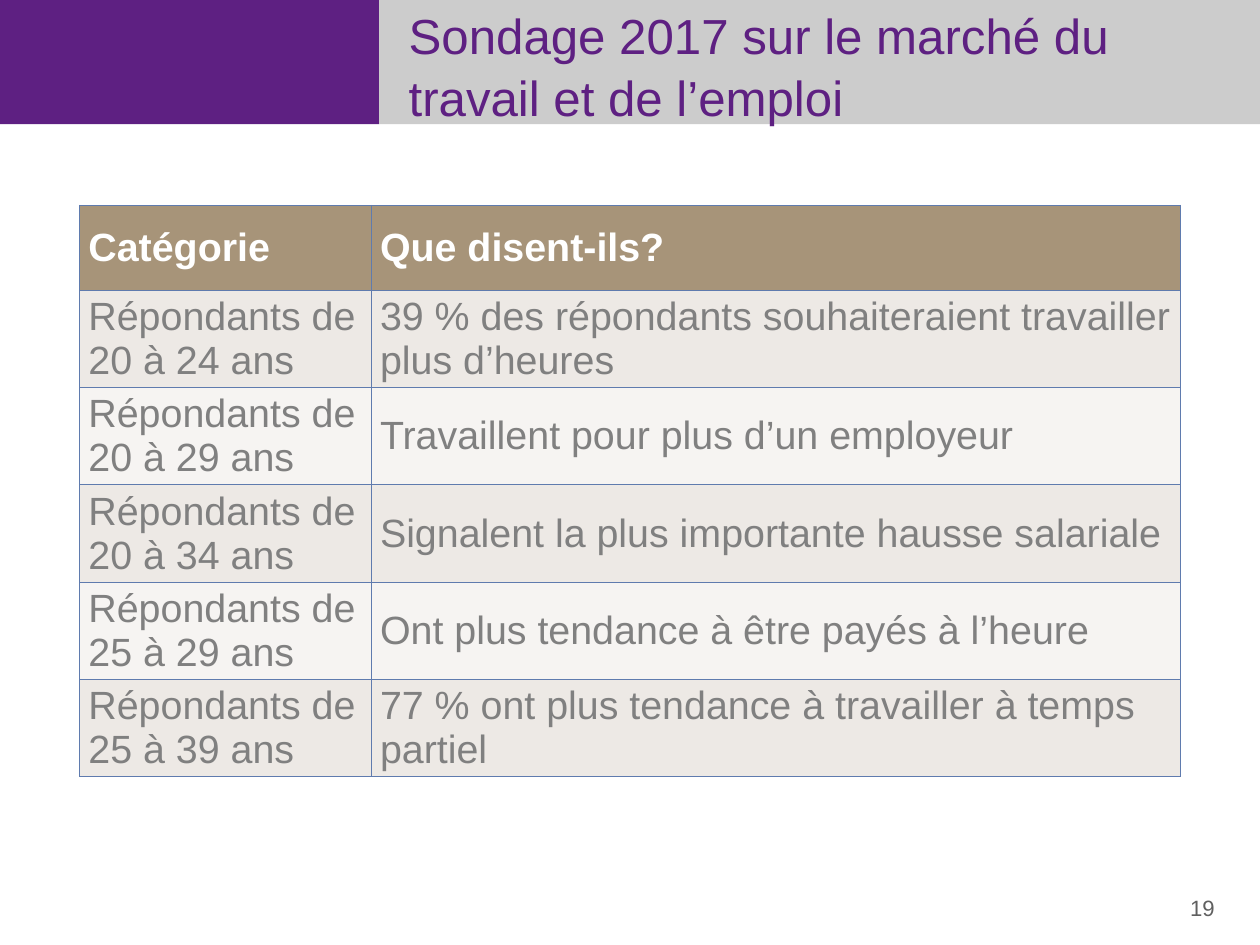
from lxml import etree
from pptx import Presentation
from pptx.dml.color import RGBColor
from pptx.enum.shapes import MSO_SHAPE
from pptx.enum.text import MSO_ANCHOR, MSO_AUTO_SIZE, PP_ALIGN
from pptx.oxml.ns import qn
from pptx.util import Cm, Pt

RECTANGLE = MSO_SHAPE.RECTANGLE
MIDDLE = MSO_ANCHOR.MIDDLE
NO_AUTOFIT = MSO_AUTO_SIZE.NONE
LEFT, RIGHT = PP_ALIGN.LEFT, PP_ALIGN.RIGHT

SLIDE_WIDTH, SLIDE_HEIGHT = 36.12, 27.1
BANNER_HEIGHT, BANNER_SPLIT = 3.56, 10.87
COLUMN_WIDTHS = [8.36, 23.21]
ROW_HEIGHT = 2.44

COLORS = {
    "purple": "5E2082",
    "silver": "CCCCCC",
    "number": "606060",
    "header": "A79479",
    "header_text": "FFFFFF",
    "odd_row": "EDE9E5",
    "even_row": "F6F4F2",
    "text": "808080",
    "border": "5F7BAE",
}

SURVEY_ROWS = [
    ("Catégorie", "Que disent-ils?"),
    ("Répondants de 20 à 24 ans", "39 % des répondants souhaiteraient travailler plus d’heures"),
    ("Répondants de 20 à 29 ans", "Travaillent pour plus d’un employeur"),
    ("Répondants de 20 à 34 ans", "Signalent la plus importante hausse salariale"),
    ("Répondants de 25 à 29 ans", "Ont plus tendance à être payés à l’heure"),
    ("Répondants de 25 à 39 ans", "77 % ont plus tendance à travailler à temps partiel"),
]


class SurveySlide:
    font_name = "Arial"

    def __init__(self, presentation):
        self.slide = presentation.slides.add_slide(presentation.slide_layouts[5])

    def color(self, name):
        return RGBColor.from_string(COLORS[name])

    def set_text(self, text_frame, text, size, color, bold=False, alignment=LEFT):
        text_frame.text = text
        text_frame.word_wrap = True
        paragraph = text_frame.paragraphs[0]
        paragraph.alignment = alignment
        for run in paragraph.runs:
            run.font.name = self.font_name
            run.font.size = Pt(size)
            run.font.bold = bold
            run.font.color.rgb = self.color(color)

    def banner(self, left, width, color):
        shape = self.slide.shapes.add_shape(RECTANGLE, Cm(left), Cm(0), Cm(width), Cm(BANNER_HEIGHT))
        shape.shadow.inherit = False
        shape.fill.solid()
        shape.fill.fore_color.rgb = self.color(color)
        shape.line.fill.background()

    def title(self, text, left, top, width, height):
        title = self.slide.shapes.title
        title.left, title.top, title.width, title.height = Cm(left), Cm(top), Cm(width), Cm(height)
        self.set_text(title.text_frame, text, 40, "purple")
        title.text_frame.auto_size = NO_AUTOFIT
        title.text_frame.vertical_anchor = MIDDLE
        title.text_frame.paragraphs[0].line_spacing = 1.05
        self.slide.shapes._spTree.append(title._element)

    def label(self, text, left, top, width, height):
        box = self.slide.shapes.add_textbox(Cm(left), Cm(top), Cm(width), Cm(height))
        self.set_text(box.text_frame, text, 18, "number", alignment=RIGHT)

    def border(self, cell):
        properties = cell._tc.get_or_add_tcPr()
        for side in ("a:lnL", "a:lnR", "a:lnT", "a:lnB"):
            line = etree.SubElement(properties, qn(side), w=str(Pt(1)))
            fill = etree.SubElement(line, qn("a:solidFill"))
            etree.SubElement(fill, qn("a:srgbClr"), val=COLORS["border"])

    def table(self, rows, left, top):
        frame = self.slide.shapes.add_table(
            len(rows), len(COLUMN_WIDTHS), Cm(left), Cm(top),
            Cm(sum(COLUMN_WIDTHS)), Cm(ROW_HEIGHT * len(rows)),
        )
        table = frame.table
        table.horz_banding = False
        for column, width in zip(table.columns, COLUMN_WIDTHS):
            column.width = Cm(width)
        for row_index, texts in enumerate(rows):
            table.rows[row_index].height = Cm(ROW_HEIGHT)
            is_header = row_index == 0
            row_color = "header" if is_header else ("even_row", "odd_row")[row_index % 2]
            text_color = "header_text" if is_header else "text"
            for column_index, text in enumerate(texts):
                cell = table.cell(row_index, column_index)
                self.set_text(cell.text_frame, text, 32, text_color, bold=is_header)
                cell.vertical_anchor = MIDDLE
                self.border(cell)
                cell.fill.solid()
                cell.fill.fore_color.rgb = self.color(row_color)


def main():
    presentation = Presentation()
    presentation.slide_width = Cm(SLIDE_WIDTH)
    presentation.slide_height = Cm(SLIDE_HEIGHT)
    survey = SurveySlide(presentation)
    survey.banner(0, BANNER_SPLIT, "purple")
    survey.banner(BANNER_SPLIT, SLIDE_WIDTH - BANNER_SPLIT, "silver")
    survey.title("Sondage 2017 sur le marché du travail et de l’emploi", 11.46, 0.74, 22.86, 2.21)
    survey.table(SURVEY_ROWS, 2.28, 5.89)
    survey.label("19", 33.27, 25.53, 1.8, 1.02)
    presentation.save("out.pptx")


if __name__ == "__main__":
    main()
